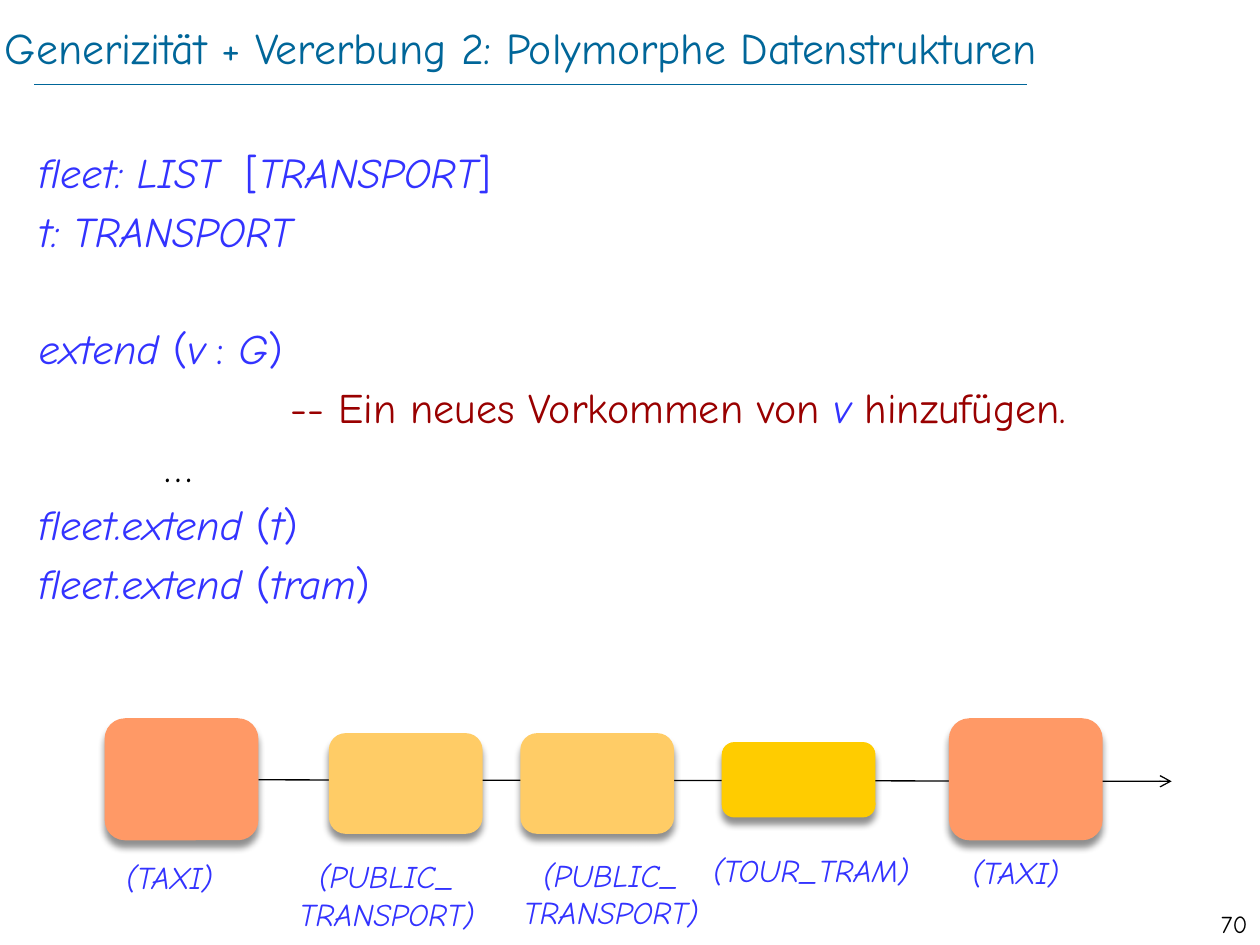
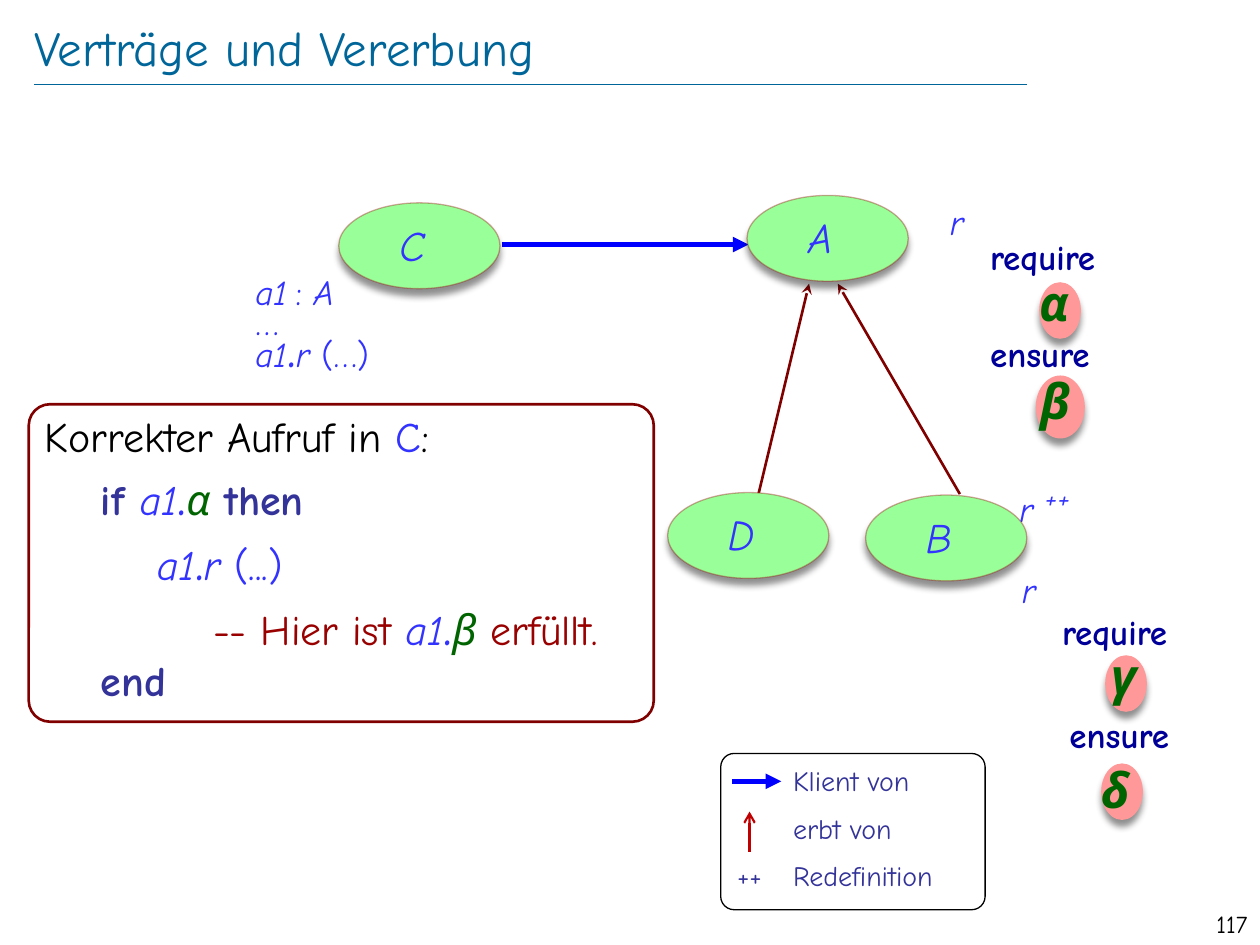
from lxml.etree import SubElement
from pptx import Presentation
from pptx.dml.color import RGBColor
from pptx.enum.shapes import MSO_CONNECTOR, MSO_SHAPE
from pptx.enum.text import MSO_ANCHOR, MSO_AUTO_SIZE, PP_ALIGN
from pptx.oxml.ns import qn
from pptx.util import Cm, Pt

FONT = "Comic Neue"
TEAL, BLACK, BLUE, MAROON = "006699", "000000", "0000FF", "800000"
PINK, GREEN = "FF9999", "99FF99"
PAD = (0.25, 0.13, 0.25, 0.13)  # left, top, right, bottom
NONE = (0, 0, 0, 0)

# Text styles: colour, font values, extra run attributes
STYLES = {
    "title": (TEAL, {}, {}),
    "text": (BLACK, {}, {}),
    "code": ("3333FF", {}, {}),
    "wide": ("3333FF", {}, {"spc": "700"}),
    "name": ("3333FF", {"italic": True}, {}),
    "super": ("3333FF", {"italic": True}, {"baseline": "30000"}),
    "note": ("990000", {}, {}),
    "word": ("333399", {"bold": True}, {}),
    "key": ("000099", {"bold": True}, {}),
    "legend": ("333399", {}, {}),
    "greek": ("006400", {"italic": True}, {}),
    "mark": ("006400", {"italic": True, "bold": True}, {}),
}

# Paragraphs: runs (text, style, own size), then paragraph values
FLEET = [
    ([("fleet: LIST", "name"), (" ", "wide"), ("[", "code"),
      ("TRANSPORT", "name"), ("]", "code")], {}),
    ([("t: TRANSPORT", "name")], {"before": 4.8}),
    ([("extend", "name"), (" (", "code"), ("v", "name"), (" ", "name", 20),
      (": ", "code"), ("G", "name"), (")", "code")], {"before": 38.3}),
    ([("-- Ein neues Vorkommen von ", "note"), ("v", "name"),
      (" hinzufügen.", "note")], {"before": 4.8, "indent": 5.08}),
    ([("…", "text")], {"before": 4.8, "indent": 2.54}),
    ([("fleet.extend ", "name"), ("(", "code"), ("t", "name"),
      (")", "code")], {"before": 4.8}),
    ([("fleet.extend ", "name"), ("(", "code"), ("tram", "name"),
      (")", "code")], {"before": 4.8}),
]
KINDS = {  # fill, top, height, label lines
    "taxi": ("FF9966", 14.48, 2.46, ["(TAXI)"]),
    "public": ("FFCC66", 14.78, 2.03, ["(PUBLIC_", "TRANSPORT)"]),
    "tram": ("FFCC00", 14.96, 1.52, ["(TOUR_TRAM)"]),
}
CARS = [  # kind, left, label left, label top, label width
    ("taxi", 2.11, 2.29, 17.17, 2.69),
    ("public", 6.63, 5.36, 17.15, 4.88),
    ("public", 10.49, 9.88, 17.12, 4.88),
    ("tram", 14.55, 14.12, 17.02, 5.08),
    ("taxi", 19.13, 19.35, 17.07, 2.69),
]

STEP = 1.13
CALL = [
    ([("Korrekter Aufruf in ", "text"), ("C", "code"), (":", "text")], {}),
    ([("if ", "word"), ("a1", "name"), (".", "code", 32), ("α ", "greek"),
      ("then", "word")], {"before": 6.4, "indent": STEP, "line": 0.8}),
    ([("a1", "name"), (".", "code", 32), ("r", "name"), (" (...)", "code")],
     {"before": 6.4, "indent": 2 * STEP, "line": 0.8}),
    ([("-- Hier ist ", "note"), ("a1", "name"), (".", "code", 32),
      ("β ", "greek"), ("erfüllt.", "note")],
     {"before": 6.4, "indent": 3 * STEP, "line": 0.8}),
    ([("end", "word")], {"before": 4.8, "indent": STEP, "line": 0.8}),
]
LEGEND = [
    ([("Klient von", "legend")], {"indent": STEP}),
    ([("erbt von", "legend")], {"before": 8, "indent": STEP}),
    ([("++\tRedefinition", "legend")], {"before": 8, "tab": STEP}),
]
CLASSES = [("C", 6.83, 4.09), ("A", 15.06, 3.94),
           ("D", 13.46, 9.93), ("B", 17.45, 9.98)]
MARKS = [  # letter, its left and top, then the oval behind it
    ("α", 20.7, 5.36, (20.95, 5.69, 0.84, 1.14)),
    ("β", 20.73, 7.34, (20.88, 7.57, 0.99, 1.27)),
    ("γ", 22.15, 12.88, (22.28, 13.21, 0.84, 1.14)),
    ("δ", 21.95, 15.19, (22.2, 15.39, 0.84, 1.14)),
]
NOTES = [  # left, top, runs, paragraph values
    (18.9, 3.91, [("r", "name")], {}),
    (19.71, 4.62, [("require", "key")], {}),
    (19.71, 6.58, [("ensure", "key")], {}),
    (20.35, 11.33, [("r", "name")], {}),
    (21.16, 12.17, [("require", "key")], {}),
    (21.31, 14.25, [("ensure", "key")], {}),
    (4.9, 5.33, [("a1", "name"), (" ", "name", 14), (": ", "code"),
                 ("A", "name")], {}),
    (4.9, 5.92, [("…", "code")], {}),
    (4.9, 6.53, [("a1", "name"), (".", "code", 32), ("r ", "name"),
                 ("(…)", "code")], {"line": 0.7}),
]
LINKS = [  # start, end, colour, width, arrowhead
    ((10.11, 4.93), (15.09, 4.93), BLUE, 3, "triangle"),
    ((19.35, 9.96), (16.89, 5.72), MAROON, 1.5, "stealth"),
    ((15.29, 9.96), (16.31, 5.72), MAROON, 1.5, "stealth"),
]
KEYS = [
    ((15.11, 17.17), (15.11, 16.36), "C00000", 1.25, "arrow"),
    ((14.76, 15.75), (15.75, 15.75), BLUE, 3, "triangle"),
]


def tint(code):
    return RGBColor.from_string(code)


def layout(para, before=0, indent=0, line=None, tab=None, align=PP_ALIGN.LEFT):
    props = para._p.get_or_add_pPr()
    if tab:
        stops = SubElement(props, qn("a:tabLst"))
        SubElement(stops, qn("a:tab"), pos=str(Cm(tab)), algn="l")
    if indent:
        props.set("marL", str(Cm(indent)))
        props.set("indent", "0")
    values = {"space_before": Pt(before), "line_spacing": line,
              "alignment": align}
    for key, value in values.items():
        setattr(para, key, value)


def write(frame, paras, size, pad=PAD, anchor=MSO_ANCHOR.TOP):
    """Fill a text frame with (runs, paragraph values) pairs."""
    sides = ("margin_left", "margin_top", "margin_right", "margin_bottom")
    values = {side: Cm(gap) for side, gap in zip(sides, pad)}
    values.update(word_wrap=True, vertical_anchor=anchor,
                  auto_size=MSO_AUTO_SIZE.NONE)
    for key, value in values.items():
        setattr(frame, key, value)
    for i, (runs, form) in enumerate(paras):
        para = frame.add_paragraph() if i else frame.paragraphs[0]
        layout(para, **form)
        for text, style, *own in runs:
            run = para.add_run()
            run.text = text
            colour, look, extra = STYLES[style]
            look = {"name": FONT, "size": Pt(own[0] if own else size), **look}
            for key, value in look.items():
                setattr(run.font, key, value)
            run.font.color.rgb = tint(colour)
            for key, value in extra.items():
                run._r.get_or_add_rPr().set(key, value)


def place(box):
    return [Cm(part) for part in box]


def label(slide, box, paras, size, pad=PAD):
    write(slide.shapes.add_textbox(*place(box)).text_frame, paras, size, pad)


def draw(slide, kind, box, fill=None, line=None, width=0.75, round=None):
    shape = slide.shapes.add_shape(kind, *place(box))
    shape.shadow.inherit = False
    if fill:
        shape.fill.solid()
        shape.fill.fore_color.rgb = tint(fill)
    else:
        shape.fill.background()
    if line:
        shape.line.color.rgb = tint(line)
        shape.line.width = Pt(width)
    else:
        shape.line.fill.background()
    if round:
        shape.adjustments[0] = round
    return shape


def cast(shape):
    """Add the soft shadow that falls straight down."""
    effects = shape._element.spPr.find(qn("a:effectLst"))
    gap = str(Pt(4))
    outer = SubElement(effects, qn("a:outerShdw"), blurRad=gap, dist=gap,
                       dir="5400000", algn="ctr", rotWithShape="0")
    black = SubElement(outer, qn("a:srgbClr"), val=BLACK)
    SubElement(black, qn("a:alpha"), val="43000")


def link(slide, start, end, colour, width, head=None):
    line = slide.shapes.add_connector(MSO_CONNECTOR.STRAIGHT,
                                      *place(start + end))
    line.line.color.rgb = tint(colour)
    line.line.width = Pt(width)
    props = line._element.spPr
    if head:
        SubElement(props.find(qn("a:ln")), qn("a:tailEnd"), type=head)
    SubElement(props, qn("a:effectLst"))


def start(deck, title, box, size, number):
    slide = deck.slides.add_slide(deck.slide_layouts[5])
    link(slide, (0.69, 1.7), (20.7, 1.7), TEAL, 0.25)
    label(slide, (24, 18.19, 1.4, 0.61),
          [([(number, "text")], {"align": PP_ALIGN.RIGHT})], 14)
    head = slide.shapes.title
    head.left, head.top, head.width, head.height = place(box)
    write(head.text_frame, [([(title, "title")], {})], size, NONE,
          MSO_ANCHOR.MIDDLE)
    return slide


def fleet(deck):
    slide = start(deck, "Generizität + Vererbung 2: Polymorphe Datenstrukturen",
                  (0.1, 0.33, 24.03, 1.22), 25, "70")
    link(slide, (5.21, 15.72), (23.62, 15.75), BLACK, 0.75, "arrow")
    label(slide, (0.53, 2.82, 24.21, 14.2), FLEET, 24)
    for kind, left, x, y, width in CARS:
        fill, top, height, lines = KINDS[kind]
        cast(draw(slide, MSO_SHAPE.ROUNDED_RECTANGLE,
                  (left, top, 3.1, height), fill))
        align = PP_ALIGN.CENTER if len(lines) > 1 else PP_ALIGN.LEFT
        paras = [([(line, "name")], {"align": align}) for line in lines]
        label(slide, (x, y, width, 0.24 + 0.78 * len(lines)), paras, 18)


def duty(deck):
    slide = start(deck, "Verträge und Vererbung",
                  (0.69, 0.33, 22.07, 1.22), 28, "117")
    for letter, x, y, oval in MARKS:
        cast(draw(slide, MSO_SHAPE.OVAL, oval, PINK))
        label(slide, (x, y, 1.4, 1.45), [([(letter, "mark")], {})], 28)
    for item in LINKS:
        link(slide, *item)
    for x, y, runs, form in NOTES:
        label(slide, (x, y, 3.8, 1.09), [(runs, form)], 20)
    frame = draw(slide, MSO_SHAPE.ROUNDED_RECTANGLE, (0.58, 8.15, 12.6, 6.4),
                 line=MAROON, width=1.5, round=0.067)
    write(frame.text_frame, CALL, 24, (0.2, 0, 0.2, 0))
    label(slide, (20.55, 9.55, 2.92, 0.84),
          [([("r ", "name"), ("++", "super", 28)], {})], 20, NONE)
    for name, x, y in CLASSES:
        oval = draw(slide, MSO_SHAPE.OVAL, (x, y, 3.25, 1.73), GREEN, "990000")
        cast(oval)
        edge = oval._element.spPr.find(qn("a:ln")).find(".//" + qn("a:srgbClr"))
        SubElement(edge, qn("a:alpha"), val="34000")
        label(slide, (x - 0.3, y + 0.23, 3.56, 1.22),
              [([(name, "name")], {"align": PP_ALIGN.CENTER})], 24, (0.1,) * 4)
    frame = draw(slide, MSO_SHAPE.ROUNDED_RECTANGLE,
                 (14.53, 15.19, 5.33, 3.15), line=BLACK, round=0.086)
    write(frame.text_frame, LEGEND, 16)
    for item in KEYS:
        link(slide, *item)


def main():
    deck = Presentation()
    deck.slide_width, deck.slide_height = Cm(25.4), Cm(19.05)
    fleet(deck)
    duty(deck)
    deck.save("out.pptx")


if __name__ == "__main__":
    main()
